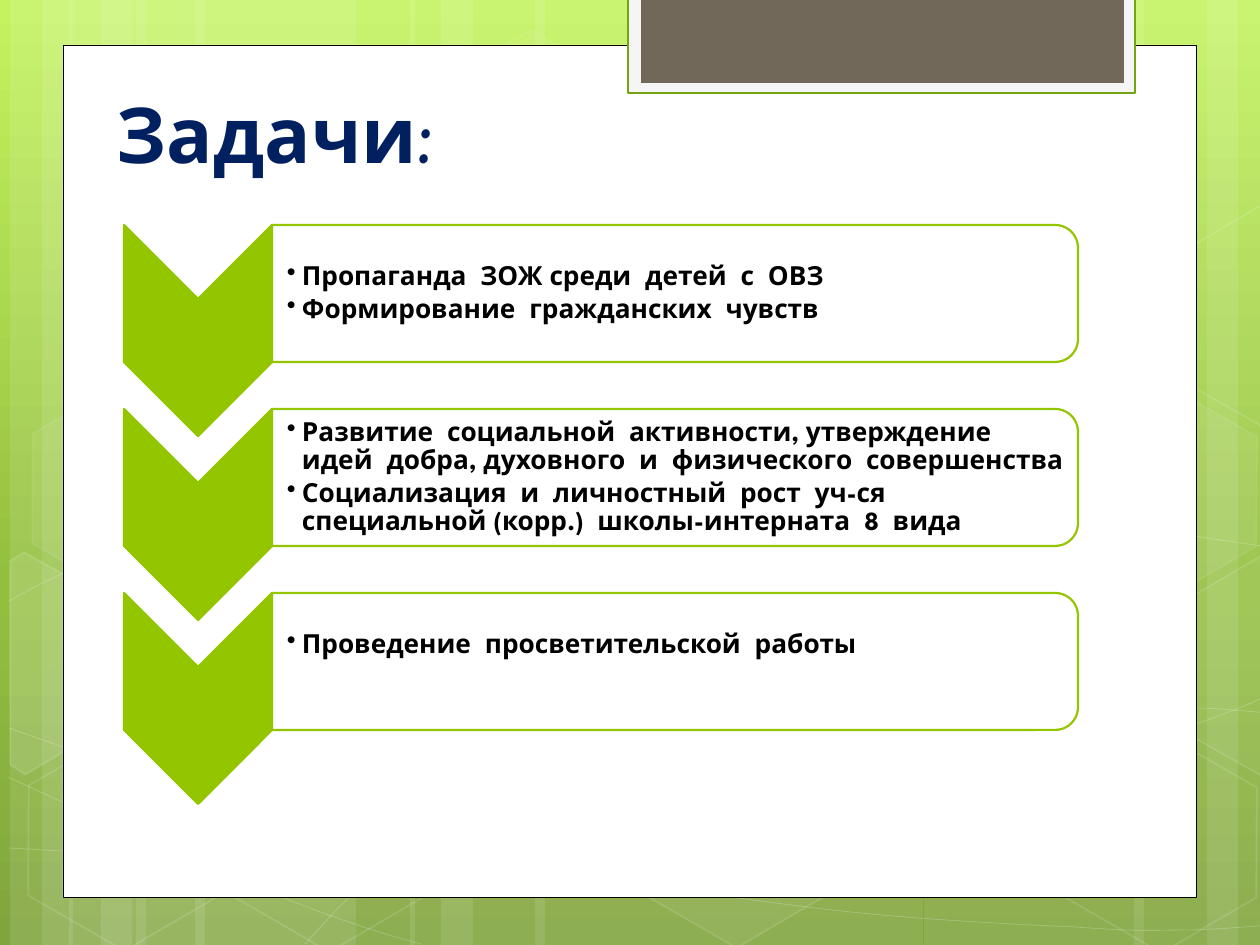
from copy import deepcopy
from math import cos, radians, sin

from pptx import Presentation
from pptx.dml.color import RGBColor
from pptx.enum.shapes import MSO_SHAPE
from pptx.enum.text import MSO_ANCHOR, PP_ALIGN
from pptx.oxml import parse_xml
from pptx.oxml.ns import nsdecls, qn
from pptx.util import Emu, Pt

RECTANGLE = MSO_SHAPE.RECTANGLE
HEXAGON = MSO_SHAPE.HEXAGON
CHEVRON = MSO_SHAPE.CHEVRON
ROUNDED_END = MSO_SHAPE.ROUND_2_SAME_RECTANGLE
MIDDLE = MSO_ANCHOR.MIDDLE
BOTTOM = MSO_ANCHOR.BOTTOM
LEFT = PP_ALIGN.LEFT

SCALE = 914400 / 126
TILT = 30
COLORS = {
    "sky": "C3F35F", "meadow": "93BF3F", "moss": "81A53E",
    "white": "FFFFFF", "black": "000000", "tab": "F5F5F5",
    "tab_edge": "74A510", "taupe": "71685A",
    "navy": "002060", "lime": "94C600",
}
BACKDROP = (("sky", 0), ("meadow", 0.62), ("moss", 1))

BANDS = ((136, 220), (10, 63), (42, 104), (195, 220), (69, 63), (101, 104),
         (924, 220), (1207, 63), (1134, 104), (535, 388), (410, 63), (441, 104))
CURVES = (
    ((9, 848), (77, 852, 145, 856, 239, 854), (334, 853, 451, 851, 577, 838),
     (703, 825, 882, 801, 998, 777), (1113, 753, 1231, 716, 1269, 694)),
    ((9, 601), (45, 581, 82, 562, 152, 543), (224, 524, 326, 496, 437, 488),
     (549, 479, 685, 478, 824, 488), (963, 498, 1193, 537, 1269, 547)),
    ((8, 777), (160, 847, 311, 916, 421, 944)),
    ((9, 728), (48, 742, 88, 756, 161, 776), (234, 795, 344, 827, 450, 848),
     (554, 869, 687, 892, 791, 905), (896, 919, 1008, 924, 1075, 927),
     (1140, 932, 1158, 930, 1191, 930), (1223, 929, 1246, 927, 1269, 925)),
    ((305, 944), (328, 919, 350, 893, 381, 871), (411, 848, 454, 823, 489, 805),
     (524, 788, 546, 780, 592, 767), (638, 754, 722, 737, 766, 728),
     (811, 719, 818, 719, 857, 717), (896, 713, 958, 709, 1000, 708),
     (1045, 707, 1116, 708, 1116, 708), (1201, 708),
     (1223, 709, 1245, 711, 1256, 712), (1268, 713, 1264, 712, 1268, 713)),
)
HEXAGONS = ((421, 45, 4, 8), (626, 742, 6, 12), (14, 745, 0, 12),
            (18, 393, 7, 8), (219, 746, 0, 12), (949, 571, 10, 12),
            (1051, 747, 0, 12), (1051, 396, 7, 8))
CUT_HEXAGONS = (
    (((10, 561), (24, 552), (121, 607), (120, 718), (25, 774), (10, 765)), 10),
    (((1167, 611), (1261, 556), (1271, 562), (1271, 772), (1263, 777), (1167, 722)), 4),
    (((1167, 261), (1261, 205), (1273, 212), (1271, 422), (1263, 427), (1167, 372)), 0),
)
TASKS = (
    ("Пропаганда  ЗОЖ среди  детей  с  ОВЗ",
     "Формирование  гражданских  чувств"),
    ("Развитие  социальной  активности, утверждение  идей  добра, "
     "духовного  и  физического  совершенства",
     "Социализация  и  личностный  рост  уч-ся специальной (корр.)  "
     "школы-интерната  8  вида"),
    ("Проведение  просветительской  работы",),
)


def px(length):
    return Emu(round(length * SCALE))


def color(name):
    return RGBColor.from_string(COLORS[name])


def fade(solid_fill, percent):
    solid_fill[0].append(parse_xml(
        f'<a:alpha {nsdecls("a")} val="{percent * 1000}"/>'))


def paint(shape, fill=None, opacity=100, edge=None, weight=1.25, edge_opacity=100):
    shape.shadow.inherit = False
    properties = shape.element.spPr
    if fill and opacity:
        shape.fill.solid()
        shape.fill.fore_color.rgb = color(fill)
        if opacity < 100:
            fade(properties.find(qn("a:solidFill")), opacity)
    else:
        shape.fill.background()
    if edge:
        shape.line.color.rgb = color(edge)
        shape.line.width = Pt(weight)
        if edge_opacity < 100:
            fade(properties.find(qn("a:ln")).find(qn("a:solidFill")), edge_opacity)
    else:
        shape.line.fill.background()


def add_box(slide, kind, box, **style):
    shape = slide.shapes.add_shape(kind, *map(px, box))
    paint(shape, **style)
    return shape


def add_turned(slide, kind, box, **style):
    left, top, width, height = box
    shift = (width - height) / 2
    shape = add_box(slide, kind, (left + shift, top - shift, height, width), **style)
    shape.rotation = 90


def add_outline(slide, points, closed, **style):
    builder = slide.shapes.build_freeform(*points[0], scale=SCALE)
    builder.add_line_segments(points[1:], close=closed)
    shape = builder.convert_to_shape()
    paint(shape, **style)
    return shape


def add_curve(slide, start, segments, **style):
    points = [start] + [segment[-2:] for segment in segments]
    curve = add_outline(slide, points, False, **style)
    left, top = (min(values) for values in zip(*points))
    for step, segment in zip(list(curve.element.iter(qn("a:lnTo"))), segments):
        if len(segment) == 2:
            continue
        corners = "".join(f'<a:pt x="{x - left}" y="{y - top}"/>'
                          for x, y in zip(segment[::2], segment[1::2]))
        step.getparent().replace(step, parse_xml(
            f'<a:cubicBezTo {nsdecls("a")}>{corners}</a:cubicBezTo>'))


def turn(point, degrees):
    x, y = point
    angle = radians(degrees)
    return x * cos(angle) - y * sin(angle), x * sin(angle) + y * cos(angle)


def add_tilted_outline(slide, points, **style):
    upright = [turn(point, -TILT) for point in points]
    center = [(min(values) + max(values)) / 2 for values in zip(*upright)]
    shift_x, shift_y = (after - before for after, before in zip(turn(center, TILT), center))
    placed = [(round(x + shift_x), round(y + shift_y)) for x, y in upright]
    add_outline(slide, placed, True, **style).rotation = TILT


def add_text_area(slide, box, anchor, insets):
    frame = slide.shapes.add_textbox(*map(px, box)).text_frame
    frame.word_wrap = True
    frame.vertical_anchor = anchor
    (frame.margin_left, frame.margin_top,
     frame.margin_right, frame.margin_bottom) = map(px, insets)
    return frame


def add_run(paragraph, words, font, size, tint):
    run = paragraph.add_run()
    run.text = words
    run.font.name = font
    run.font.size = Pt(size)
    run.font.bold = True
    run.font.color.rgb = color(tint)


def add_backdrop(slide, box):
    left, top, width, height = box
    fill = slide.background.fill
    fill.gradient()
    fill.gradient_angle = 270
    stop_list = slide.element.find(".//" + qn("a:gsLst"))
    stop_list.append(deepcopy(stop_list[-1]))
    for stop, (name, position) in zip(fill.gradient_stops, BACKDROP):
        stop.color.rgb = color(name)
        stop.position = position

    for x, band_width in BANDS:
        add_box(slide, RECTANGLE, (left + x, top, band_width, height),
                fill="white", opacity=10)
    for start, *segments in CURVES:
        add_curve(slide, start, segments, edge="white", weight=0.5, edge_opacity=20)
    for x, y, opacity, edge_opacity in HEXAGONS:
        hexagon = add_box(slide, HEXAGON, (left + x, top + y, 220, 191), fill="white",
                          opacity=opacity, edge="white", weight=1,
                          edge_opacity=edge_opacity)
        hexagon.adjustments[0] = 0.285
        hexagon.rotation = TILT
    for points, opacity in CUT_HEXAGONS:
        add_tilted_outline(slide, points, fill="white", opacity=opacity,
                           edge="white", weight=1, edge_opacity=12)


def add_page(slide, box):
    left, top, width, height = box
    add_box(slide, RECTANGLE, box, fill="white", edge="black", weight=0.5)
    add_box(slide, RECTANGLE, (left + 565, top - 48, 507, 96),
            fill="tab", edge="tab_edge")
    add_box(slide, RECTANGLE, (left + 578, top - 48, 483, 86), fill="taupe")


def add_title(slide, box):
    frame = add_text_area(slide, box, BOTTOM, (13, 6, 13, 6))
    add_run(frame.paragraphs[0], "Задачи:", "Comic Neue", 44, "navy")


def add_task(slide, box, items):
    left, top, width, height = box
    arrow_width, panel_height = 148, 137
    panel_left, panel_width = left + arrow_width, width - arrow_width
    add_turned(slide, CHEVRON, (left, top, arrow_width, height),
               fill="lime", edge="lime")
    add_turned(slide, ROUNDED_END, (panel_left, top, panel_width, panel_height),
               fill="white", opacity=90, edge="lime")
    bottom_inset = 34 if len(items) == 1 else 1
    frame = add_text_area(slide, (panel_left, top + 7, panel_width - 7, panel_height - 14),
                          MIDDLE, (15, 1, 1, bottom_inset))
    for index, item in enumerate(items):
        paragraph = frame.add_paragraph() if index else frame.paragraphs[0]
        paragraph.alignment = LEFT
        paragraph.line_spacing = 0.9
        paragraph.space_after = Pt(2.5)
        properties = paragraph._p.get_or_add_pPr()
        properties.set("marL", str(px(15)))
        properties.set("indent", str(px(-15)))
        properties.append(parse_xml(f'<a:buFontTx {nsdecls("a")}/>'))
        properties.append(parse_xml(f'<a:buChar {nsdecls("a")} char="•"/>'))
        add_run(paragraph, item, "League Spartan", 15, "black")


def main():
    deck = Presentation()
    deck.slide_width, deck.slide_height = px(1260), px(945)
    slide = deck.slides.add_slide(deck.slide_layouts[6])
    add_backdrop(slide, (0, 0, 1260, 945))
    add_page(slide, (63, 45, 1134, 853))
    add_title(slide, (104, 75, 968, 110))
    for row, items in enumerate(TASKS):
        add_task(slide, (124, 225 + 184 * row, 954, 211), items)
    deck.save("out.pptx")


if __name__ == "__main__":
    main()
